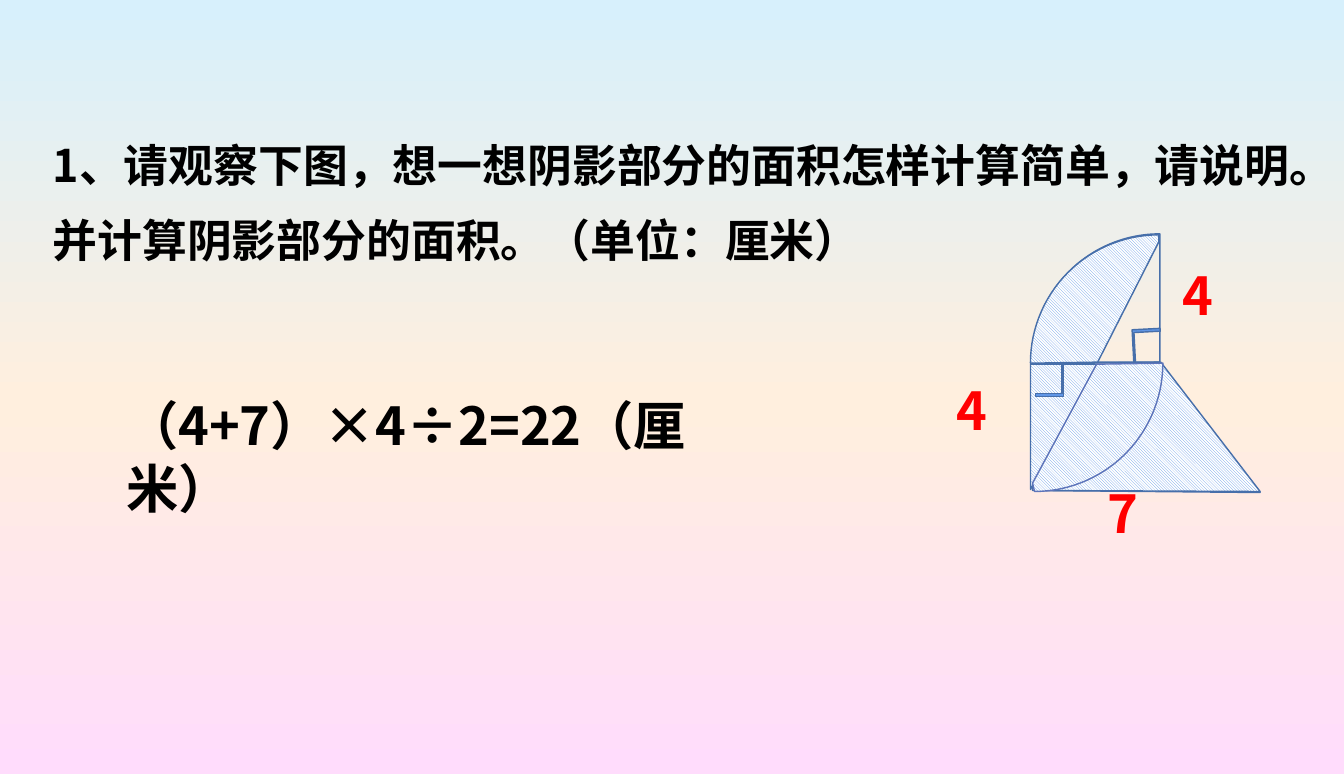
from copy import deepcopy
from dataclasses import dataclass
from math import cos, radians, sin

from pptx import Presentation
from pptx.dml.color import RGBColor
from pptx.enum import dml, shapes, text
from pptx.oxml import ns
from pptx.util import Inches, Pt


@dataclass(frozen=True)
class Theme:
    font: str = "Noto Sans CJK SC"
    ink: str = "000000"
    measure: str = "FF0000"
    outline: str = "476FAA"
    lower_outline: str = "5E75BA"
    hatch: str = "6096E6"
    paper: str = "FFFFFF"
    sky: tuple = ((0, "D7F0FC"), (0.52, "FFEFDE"), (1, "FFDCFC"))
    question_size: float = 31.2
    answer_size: float = 36.4


THEME = Theme()
RADIUS = 1.24


def rgb(value):
    return RGBColor.from_string(value)


def paint_background(slide):
    fill = slide.background.fill
    fill.gradient()
    fill.gradient_angle = 270
    stop_list = slide.element.find(".//" + ns.qn("a:gsLst"))
    stop_list.insert(1, deepcopy(stop_list[0]))
    for stop, (position, color) in zip(fill.gradient_stops, THEME.sky):
        stop.position = position
        stop.color.rgb = rgb(color)


def add_words(slide, box, words, size, color, spacing=None):
    frame = slide.shapes.add_textbox(*map(Inches, box)).text_frame
    frame.word_wrap = True
    frame.auto_size = text.MSO_AUTO_SIZE.SHAPE_TO_FIT_TEXT
    paragraph = frame.paragraphs[0]
    paragraph.line_spacing = spacing
    run = paragraph.add_run()
    run.text = words
    run.font.size = Pt(size)
    run.font.bold = True
    run.font.color.rgb = rgb(color)
    run.font.name = THEME.font
    east_asian = run.font._element.makeelement(ns.qn("a:ea"), {"typeface": THEME.font})
    run.font._element.find(ns.qn("a:latin")).addnext(east_asian)


def draw_outline(shape, color=THEME.outline):
    shape.shadow.inherit = False
    shape.line.color.rgb = rgb(color)
    shape.line.width = Pt(1)


def arc(center, start, end, steps=30):
    """Points on a circle; degrees run clockwise from the right."""
    angles = [radians(start + (end - start) * i / steps) for i in range(steps + 1)]
    return [(center[0] + RADIUS * cos(a), center[1] + RADIUS * sin(a)) for a in angles]


def add_region(slide, points, hatched=True, outline=THEME.outline):
    corners = [(Inches(x), Inches(y)) for x, y in points]
    builder = slide.shapes.build_freeform(*corners[0])
    builder.add_line_segments(corners[1:], close=True)
    region = builder.convert_to_shape()
    draw_outline(region, outline)
    if hatched:
        region.fill.patterned()
        region.fill.pattern = dml.MSO_PATTERN.LIGHT_DOWNWARD_DIAGONAL
        region.fill.fore_color.rgb = rgb(THEME.hatch)
        region.fill.back_color.rgb = rgb(THEME.paper)
    else:
        region.fill.background()


def add_quarter_circle(slide):
    quarter = slide.shapes.add_shape(
        shapes.MSO_SHAPE.PIE, *map(Inches, (9.97, 2.26, 2 * RADIUS, 2 * RADIUS)))
    quarter.adjustments[0] = 107.523
    quarter.adjustments[1] = 162
    quarter.fill.background()
    draw_outline(quarter)


def add_right_angle(slide, left, top, rotation):
    mark = slide.shapes.add_shape(
        shapes.MSO_SHAPE.CORNER, *map(Inches, (left, top, 0.31, 0.27)))
    mark.adjustments[0] = 0.059
    mark.adjustments[1] = 0.103
    mark.rotation = rotation
    mark.fill.solid()
    mark.fill.fore_color.rgb = rgb(THEME.hatch)
    draw_outline(mark)


def add_figure(slide):
    upper_arc = arc((11.2, 3.51), 180, 270)
    lower_arc = arc((9.98, 3.5), 88, 0)
    add_quarter_circle(slide)
    add_region(slide, [(11.21, 3.5), (12.18, 4.76), (9.98, 4.74), (9.98, 3.5)], hatched=False)
    add_region(slide, [(10.61, 3.52), (9.96, 4.73), (9.96, 3.52)])
    add_region(slide, [(12.18, 4.75), (10.01, 4.74)] + lower_arc)
    add_region(slide, upper_arc + [(11.2, 2.34), (10.61, 3.5)])
    add_right_angle(slide, 10.93, 3.2, 87)
    add_right_angle(slide, 9.99, 3.54, 270)
    add_region(slide, arc((10, 3.51), 0, 90) + [(9.98, 4.67), (10.6, 3.52)],
               outline=THEME.lower_outline)


def main():
    deck = Presentation()
    deck.slide_width, deck.slide_height = Inches(12.99), Inches(7.48)
    slide = deck.slides.add_slide(deck.slide_layouts[6])
    paint_background(slide)
    add_words(slide, (0.41, 1.07, 12.58, 1.57),
              "1、请观察下图，想一想阴影部分的面积怎样计算简单，请说明。"
              "并计算阴影部分的面积。（单位：厘米）",
              THEME.question_size, THEME.ink, 1.4)
    add_words(slide, (1.12, 3.75, 6.05, 0.71), "（4+7）×4÷2=22（厘米）",
              THEME.answer_size, THEME.ink)
    for length, left, top in (("4", 9.15, 3.77), ("7", 10.61, 4.77), ("4", 11.33, 2.66)):
        add_words(slide, (left, top, 0.65, 0.53), length,
                  THEME.answer_size, THEME.measure, 0.7)
    add_figure(slide)
    deck.save("out.pptx")


if __name__ == "__main__":
    main()
